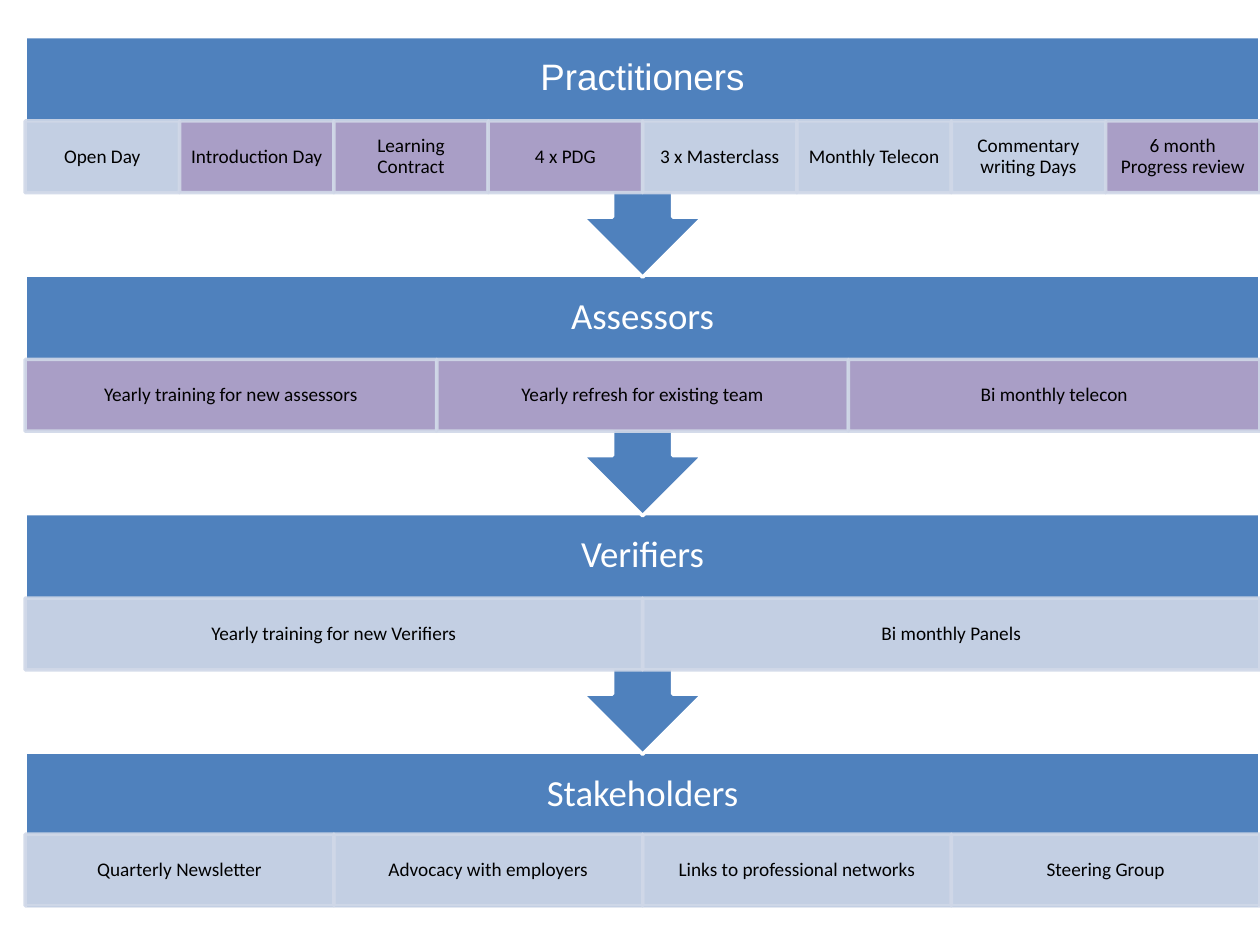
from dataclasses import dataclass

from lxml import etree
from pptx import Presentation
from pptx import util as u
from pptx.dml.color import RGBColor
from pptx.enum import shapes, text
from pptx.oxml.ns import qn


@dataclass(frozen=True)
class Theme:
    """Colours, fonts and sizes shared by the whole slide."""
    band: str = "4F81BD"
    pale: str = "D0D8E8"
    purple: str = "B3A2C7"
    white: str = "FFFFFF"
    black: str = "000000"
    font: str = "Calibri"
    heading_size: int = 21
    cell_size: int = 11
    line_width: int = 2
    opacity: int = 90


@dataclass(frozen=True)
class Box:
    """A rectangle in inches."""
    left: float
    top: float
    width: float
    height: float

    def emu(self):
        """Return the four lengths for python-pptx."""
        return [u.Inches(v) for v in (self.left, self.top, self.width, self.height)]


THEME = Theme()
MARGIN_LEFT, FIRST_TOP, LAST_TOP = 0.2, 0.29, 5.97
BAND_WIDTH, CALLOUT_HEIGHT, LAST_HEIGHT = 9.8, 1.91, 1.24
HEADING_HEIGHT, LAST_HEADING_HEIGHT, CELL_HEIGHT = 0.67, 0.65, 0.57

GROUPS = [
    ("Practitioners", "Arial", [
        ("Open Day", THEME.pale),
        ("Introduction Day", THEME.purple),
        ("Learning Contract", THEME.purple),
        ("4 x PDG", THEME.purple),
        ("3 x Masterclass", THEME.pale),
        ("Monthly Telecon", THEME.pale),
        ("Commentary writing Days", THEME.pale),
        ("6 month Progress review", THEME.purple),
    ]),
    ("Assessors", THEME.font, [
        ("Yearly training for new assessors", THEME.purple),
        ("Yearly refresh for existing team", THEME.purple),
        ("Bi monthly telecon", THEME.purple),
    ]),
    ("Verifiers", THEME.font, [
        ("Yearly training for new Verifiers", THEME.pale),
        ("Bi monthly Panels", THEME.pale),
    ]),
    ("Stakeholders", THEME.font, [
        ("Quarterly Newsletter", THEME.pale),
        ("Advocacy with employers", THEME.pale),
        ("Links to professional networks", THEME.pale),
        ("Steering Group", THEME.pale),
    ]),
]


def add_block(page, kind, box, fill, line, opacity=100):
    """Add a filled, outlined preset shape."""
    block = page.shapes.add_shape(kind, *box.emu())
    block.shadow.inherit = False
    block.fill.solid()
    block.fill.fore_color.rgb = RGBColor.from_string(fill)
    block.line.color.rgb = RGBColor.from_string(line)
    block.line.width = u.Pt(THEME.line_width)
    if opacity < 100:
        for colour in block.fill._xPr.iter(qn("a:srgbClr")):
            etree.SubElement(colour, qn("a:alpha"), val=str(opacity * 1000))
    return block


def write_centred(shape, words, size, colour, font, inset_x, inset_y):
    """Write one centred paragraph in the middle of a shape."""
    frame = shape.text_frame
    frame.word_wrap = True
    frame.vertical_anchor = text.MSO_ANCHOR.MIDDLE
    frame.margin_left = frame.margin_right = u.Inches(inset_x)
    frame.margin_top = frame.margin_bottom = u.Inches(inset_y)
    para = frame.paragraphs[0]
    para.text = words
    para.alignment = text.PP_ALIGN.CENTER
    para.line_spacing = 0.9
    para.font.size = u.Pt(size)
    para.font.name = font
    para.font.color.rgb = RGBColor.from_string(colour)


def add_cells(page, box, cells):
    """Divide a row into equal cells."""
    width = box.width / len(cells)
    for column, (words, fill) in enumerate(cells):
        place = Box(box.left + column * width, box.top, width, box.height)
        cell = add_block(page, shapes.MSO_SHAPE.RECTANGLE, place, fill,
                         THEME.pale, THEME.opacity)
        write_centred(cell, words, THEME.cell_size, THEME.black, THEME.font, 0.08, 0.02)


def add_group(page, box, group, is_last):
    """Place a band with its heading and its row of cells."""
    heading, font, cells = group
    kind = shapes.MSO_SHAPE.RECTANGLE if is_last else shapes.MSO_SHAPE.UP_ARROW_CALLOUT
    band = add_block(page, kind, box, THEME.band, THEME.white)
    band.rotation = 0 if is_last else 180
    title_box = Box(box.left, box.top, box.width, HEADING_HEIGHT)
    title = page.shapes.add_textbox(*title_box.emu())
    write_centred(title, heading, THEME.heading_size, THEME.white, font, 0.16, 0.16)
    offset = LAST_HEADING_HEIGHT if is_last else HEADING_HEIGHT
    add_cells(page, Box(box.left, box.top + offset, box.width, CELL_HEIGHT), cells)


def main():
    """Build the deck, stacking the groups from the bottom up."""
    deck = Presentation()
    deck.slide_width, deck.slide_height = u.Inches(10), u.Inches(7.5)
    page = deck.slides.add_slide(deck.slide_layouts[6])
    last = len(GROUPS) - 1
    pitch = (LAST_TOP - FIRST_TOP) / last
    for row in range(last, -1, -1):
        height = LAST_HEIGHT if row == last else CALLOUT_HEIGHT
        box = Box(MARGIN_LEFT, FIRST_TOP + row * pitch, BAND_WIDTH, height)
        add_group(page, box, GROUPS[row], row == last)
    deck.save("out.pptx")


if __name__ == "__main__":
    main()
